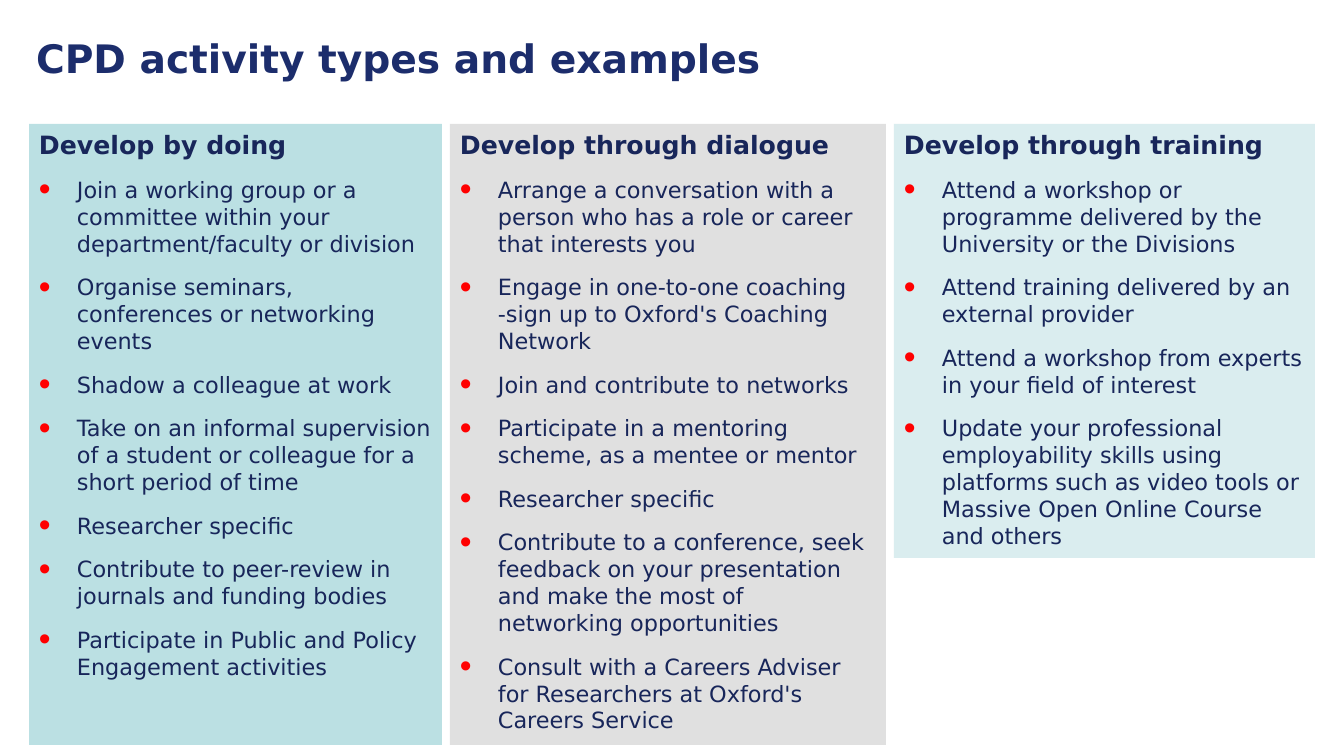
import pptx
import pptx.util
import pptx.dml.color
import pptx.enum.shapes
import pptx.enum.text
import pptx.oxml.ns
from dataclasses import dataclass
from lxml import etree

TITLE = "CPD activity types and examples"

# heading, fill, width, height, items
COLUMNS = [
    ("Develop by doing", "BBE0E3", 413, 621, [
        "Join a working group or a committee within your department/faculty or division",
        "Organise seminars, conferences or networking events",
        "Shadow a colleague at work",
        "Take on an informal supervision of a student or colleague for a short period of time",
        "Researcher specific",
        "Contribute to peer-review in journals and funding bodies",
        "Participate in Public and Policy Engagement activities",
    ]),
    ("Develop through dialogue", "E0E0E0", 436, 621, [
        "Arrange a conversation with a person who has a role or career that interests you",
        "Engage in one-to-one coaching -sign up to Oxford's Coaching Network",
        "Join and contribute to networks",
        "Participate in a mentoring scheme, as a mentee or mentor",
        "Researcher specific",
        "Contribute to a conference, seek feedback on your presentation "
        "and make the most of networking opportunities",
        "Consult with a Careers Adviser for Researchers at Oxford's Careers Service",
    ]),
    ("Develop through training", "DAEDEF", 421, 434, [
        "Attend a workshop or programme delivered by the University or the Divisions",
        "Attend training delivered by an external provider",
        "Attend a workshop from experts in your field of interest",
        "Update your professional employability skills using platforms such "
        "as video tools or Massive Open Online Course and others",
    ]),
]


@dataclass(frozen=True)
class Theme:
    font: str = "DejaVu Sans"
    title: str = "1C2D6C"
    text: str = "18265A"
    back: str = "FFFFFF"
    bullet: str = "FF0000"
    title_size: int = 28
    head_size: int = 18
    item_size: int = 16
    after: int = 12


THEME = Theme()
SCALE = 914400 / 100.8
LEFT, TOP, GAP, INDENT = 29, 124, 8, 38


def px(num):
    return pptx.util.Emu(round(num * SCALE))


def rgb(code):
    return pptx.dml.color.RGBColor.from_string(code)


def place(shape, left, top, width, height, fill):
    shape.left, shape.top = px(left), px(top)
    shape.width, shape.height = px(width), px(height)
    shape.fill.solid()
    shape.fill.fore_color.rgb = rgb(fill)
    frame = shape.text_frame
    frame.word_wrap = True
    frame.vertical_anchor = pptx.enum.text.MSO_ANCHOR.TOP
    return frame


def write(para, text, size, color, bold):
    para.alignment = pptx.enum.text.PP_ALIGN.LEFT
    para.space_after = pptx.util.Pt(THEME.after)
    run = para.add_run()
    run.text = text
    run.font.name = THEME.font
    run.font.size = pptx.util.Pt(size)
    run.font.bold = bold
    run.font.color.rgb = rgb(color)


def add_bullet(para):
    props = para._p.get_or_add_pPr()
    props.set("marL", str(px(INDENT)))
    props.set("indent", str(-px(INDENT)))
    qn = pptx.oxml.ns.qn
    color = etree.SubElement(props, qn("a:buClr"))
    etree.SubElement(color, qn("a:srgbClr"), val=THEME.bullet)
    etree.SubElement(props, qn("a:buSzPct"), val="150000")
    etree.SubElement(props, qn("a:buFont"), typeface="Arial")
    etree.SubElement(props, qn("a:buChar"), char="•")


def add_column(slide, left, column):
    head, fill, width, height, items = column
    kind = pptx.enum.shapes.MSO_SHAPE.RECTANGLE
    panel = slide.shapes.add_shape(kind, 0, 0, 0, 0)
    panel.shadow.inherit = False
    panel.line.fill.background()
    frame = place(panel, left, TOP, width, height, fill)
    frame.auto_size = pptx.enum.text.MSO_AUTO_SIZE.SHAPE_TO_FIT_TEXT
    write(frame.paragraphs[0], head, THEME.head_size, THEME.text, True)
    for item in items:
        para = frame.add_paragraph()
        add_bullet(para)
        write(para, item, THEME.item_size, THEME.text, False)


def main():
    deck = pptx.Presentation()
    deck.slide_width, deck.slide_height = px(1344), px(756)
    slide = deck.slides.add_slide(deck.slide_layouts[5])
    frame = place(slide.shapes.title, 26, 29, 1270, 74, THEME.back)
    frame.auto_size = pptx.enum.text.MSO_AUTO_SIZE.NONE
    write(frame.paragraphs[0], TITLE, THEME.title_size, THEME.title, True)
    left = LEFT
    for column in COLUMNS:
        add_column(slide, left, column)
        left += column[2] + GAP
    deck.save("out.pptx")


if __name__ == "__main__":
    main()
